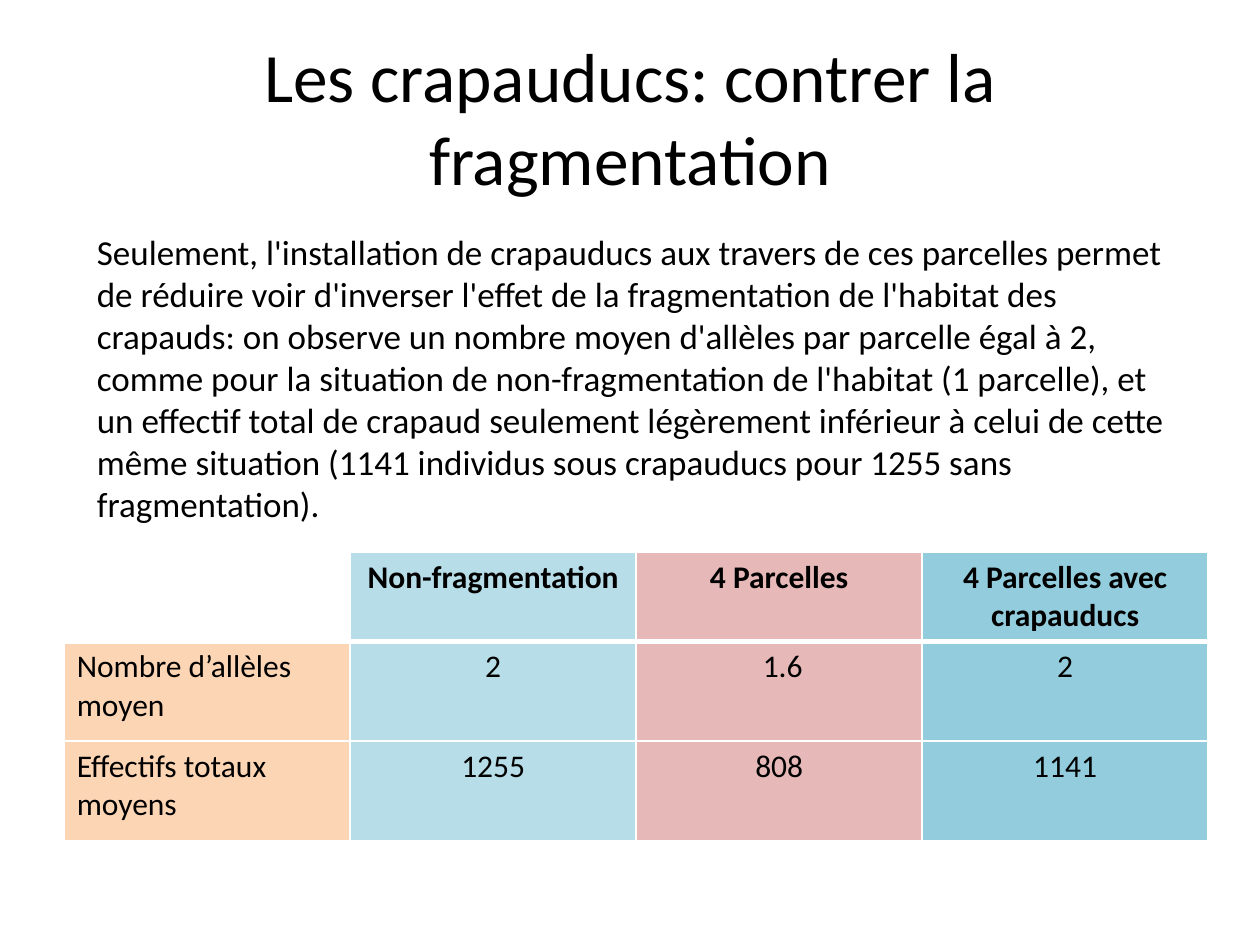
"""Build the slide on toad tunnels and habitat fragmentation."""
from dataclasses import dataclass

from lxml import etree
from pptx import Presentation
from pptx.dml.color import RGBColor
from pptx.enum import text
from pptx.oxml import ns
from pptx.util import Inches, Pt

FONT = "Calibri"
COLOURS = {
    "ink": "000000",
    "border": "FFFFFF",
    "label": "FCD5B5",
    "whole": "B7DEE8",
    "parcels": "E6B9B8",
    "tunnels": "93CDDD",
}
TITLE = "Les crapauducs: contrer la fragmentation"
BODY = (
    "Seulement, l'installation de crapauducs aux travers de ces parcelles permet "
    "de réduire voir d'inverser l'effet de la fragmentation de l'habitat des "
    "crapauds: on observe un nombre moyen d'allèles par parcelle égal à 2, comme "
    "pour la situation de non-fragmentation de l'habitat (1 parcelle), et un "
    "effectif total de crapaud seulement légèrement inférieur à celui de cette "
    "même situation (1141 individus sous crapauducs pour 1255 sans fragmentation)."
)


@dataclass(frozen=True)
class Column:
    """A table column: its fill colour and its texts from top to bottom."""
    colour: str
    texts: tuple[str, ...]


COLUMNS = (
    Column("label", ("", "Nombre d’allèles moyen", "Effectifs totaux moyens")),
    Column("whole", ("Non-fragmentation", "2", "1255")),
    Column("parcels", ("4 Parcelles", " 1.6", "808")),
    Column("tunnels", ("4 Parcelles avec crapauducs", "2", "1141")),
)
ROW_HEIGHTS = (0.71, 0.79, 0.79)
COLUMN_WIDTH = 2.27


def place(shape, left: float, top: float, width: float, height: float) -> None:
    """Move and size a shape, in inches."""
    shape.left, shape.top = Inches(left), Inches(top)
    shape.width, shape.height = Inches(width), Inches(height)


def write(frame, words: str, size: float, align=None, bold: bool = False) -> None:
    """Write one run into the first paragraph of a text frame."""
    paragraph = frame.paragraphs[0]
    paragraph.alignment = align
    run = paragraph.add_run()
    run.text = words
    run.font.name, run.font.size, run.font.bold = FONT, Pt(size), bold
    run.font.color.rgb = RGBColor.from_string(COLOURS["ink"])


def add_borders(cell, top: float, bottom: float) -> None:
    """Draw solid borders around a cell, with widths in points."""
    properties = cell._tc.get_or_add_tcPr()
    for tag, width in (("lnL", 1), ("lnR", 1), ("lnT", top), ("lnB", bottom)):
        line = etree.SubElement(properties, ns.qn(f"a:{tag}"), w=str(Pt(width)))
        fill = etree.SubElement(line, ns.qn("a:solidFill"))
        etree.SubElement(fill, ns.qn("a:srgbClr"), val=COLOURS["border"])


def add_results(slide) -> None:
    """Add the table that compares the three situations."""
    table = slide.shapes.add_table(
        len(ROW_HEIGHTS), len(COLUMNS), Inches(0.51), Inches(4.38),
        Inches(COLUMN_WIDTH * len(COLUMNS)), Inches(sum(ROW_HEIGHTS)),
    ).table
    table.horz_banding = False
    for row, height in zip(table.rows, ROW_HEIGHTS):
        row.height = Inches(height)
    for x, column in enumerate(COLUMNS):
        table.columns[x].width = Inches(COLUMN_WIDTH)
        align = text.PP_ALIGN.CENTER if x else text.PP_ALIGN.LEFT
        for y, words in enumerate(column.texts):
            cell = table.cell(y, x)
            add_borders(cell, top=3 if y == 1 else 1, bottom=3 if y == 0 else 1)
            if words:
                cell.fill.solid()
                cell.fill.fore_color.rgb = RGBColor.from_string(COLOURS[column.colour])
                write(cell.text_frame, words, 18, align, bold=y == 0)
            else:
                cell.fill.background()


def main() -> None:
    """Build and save the presentation."""
    presentation = Presentation()
    presentation.slide_width, presentation.slide_height = Inches(10), Inches(7.5)
    slide = presentation.slides.add_slide(presentation.slide_layouts[5])

    title = slide.shapes.title
    place(title, 0.5, 0.3, 9, 1.25)
    title.text_frame.vertical_anchor = text.MSO_ANCHOR.MIDDLE
    write(title.text_frame, TITLE, 39.6, text.PP_ALIGN.CENTER)

    add_results(slide)

    body = slide.shapes.add_textbox(
        Inches(0.67), Inches(1.78), Inches(8.82), Inches(2.46))
    body.text_frame.word_wrap = True
    body.text_frame.auto_size = text.MSO_AUTO_SIZE.SHAPE_TO_FIT_TEXT
    write(body.text_frame, BODY, 20)

    presentation.save("out.pptx")


if __name__ == "__main__":
    main()
